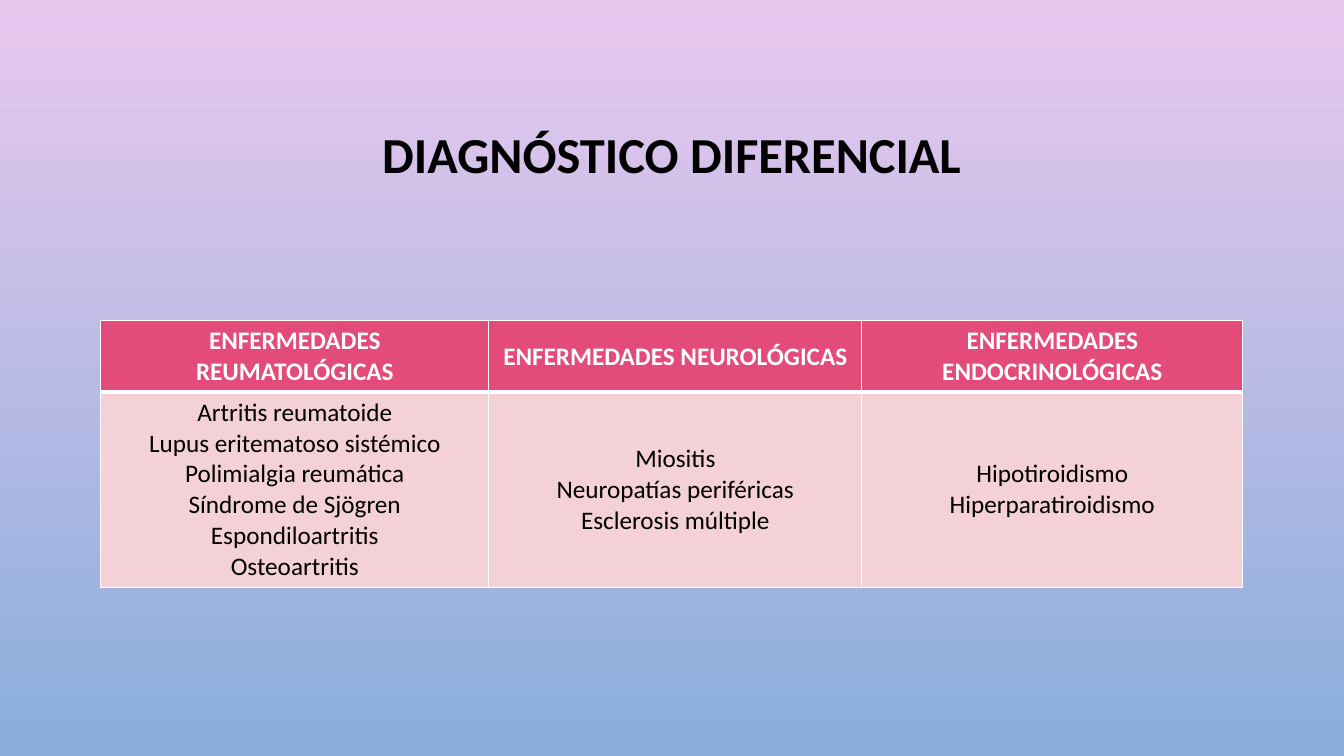
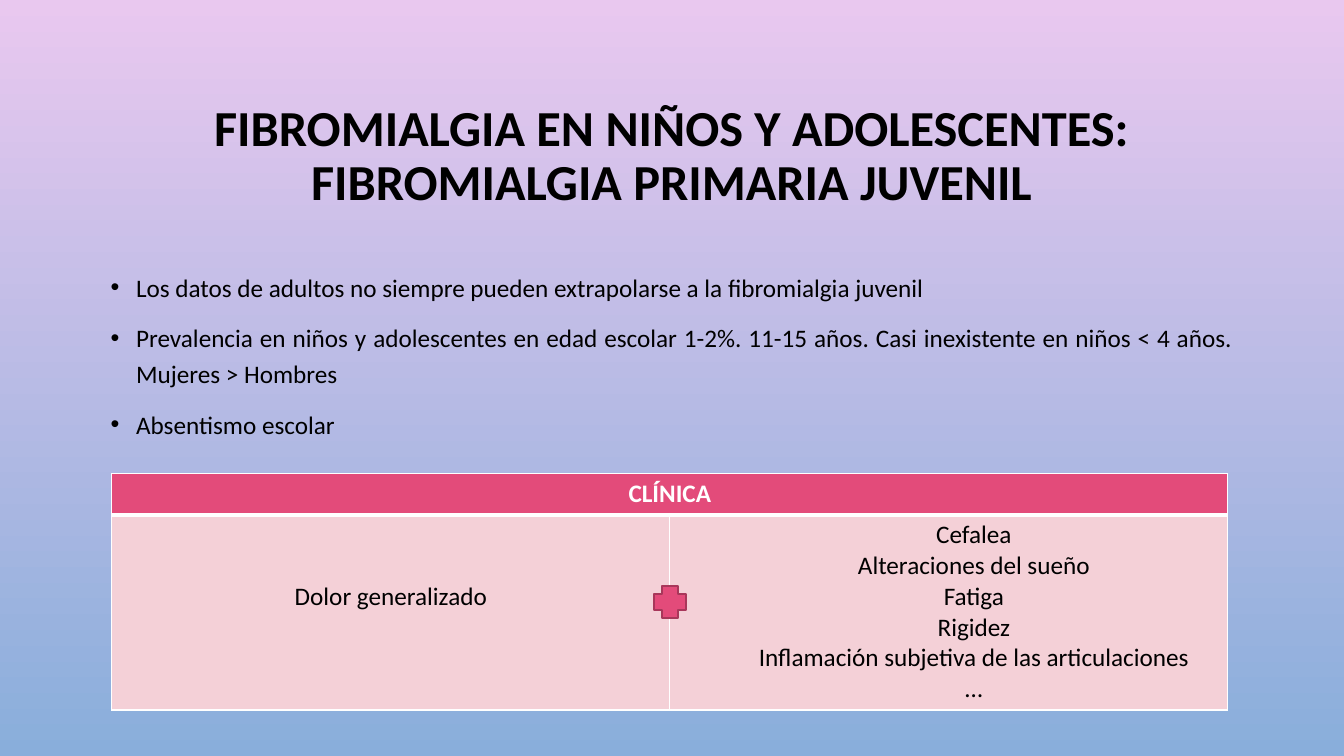
"""Two slides on fibromyalgia: differential diagnosis and the juvenile form."""
from lxml import etree
from pptx import Presentation
from pptx.dml import color as dml
from pptx.enum import shapes, text
from pptx.oxml import ns
from pptx.util import Cm, Pt

FONT = "Calibri"
COLORS = {
    "sky_top": "E9C8EF", "sky_bottom": "89AEDB", "header": "E34B7A",
    "body": "F4D0D7", "edge": "A8375A", "dark": "000000", "light": "FFFFFF",
}
MARGIN, CONTENT_WIDTH = 2.54, 28.78
LINE_HEIGHT = 0.78

DIAGNOSIS_TITLE = "DIAGNÓSTICO DIFERENCIAL"
DISEASES = {
    "ENFERMEDADES REUMATOLÓGICAS": [
        "Artritis reumatoide", "Lupus eritematoso sistémico", "Polimialgia reumática",
        "Síndrome de Sjögren", "Espondiloartritis", "Osteoartritis",
    ],
    "ENFERMEDADES NEUROLÓGICAS": [
        "Miositis", "Neuropatías periféricas", "Esclerosis múltiple",
    ],
    "ENFERMEDADES ENDOCRINOLÓGICAS": ["Hipotiroidismo", "Hiperparatiroidismo"],
}
JUVENILE_TITLE = "FIBROMIALGIA EN NIÑOS Y ADOLESCENTES: FIBROMIALGIA PRIMARIA JUVENIL"
JUVENILE_FACTS = [
    "Los datos de adultos no siempre pueden extrapolarse a la fibromialgia juvenil",
    "Prevalencia en niños y adolescentes en edad escolar 1-2%. 11-15 años. "
    "Casi inexistente en niños < 4 años. Mujeres > Hombres",
    "Absentismo escolar",
]
CLINIC_HEADER = ["CLÍNICA"]
CLINIC_SIGNS = [
    ["Dolor generalizado"],
    ["Cefalea", "Alteraciones del sueño", "Fatiga", "Rigidez",
     "Inflamación subjetiva de las articulaciones", "…"],
]


def rgb(name):
    return dml.RGBColor.from_string(COLORS[name])


def write(frame, lines, size=18, color="dark", bold=False, align=text.PP_ALIGN.CENTER):
    frame.word_wrap = True
    for index, line in enumerate(lines):
        paragraph = frame.paragraphs[0] if index == 0 else frame.add_paragraph()
        paragraph.alignment = align
        run = paragraph.add_run()
        run.text = line
        run.font.name, run.font.size, run.font.bold = FONT, Pt(size), bold
        run.font.color.rgb = rgb(color)


def add_text_box(slide, top, height):
    box = slide.shapes.add_textbox(Cm(MARGIN), Cm(top), Cm(CONTENT_WIDTH), Cm(height))
    return box.text_frame


def add_titled_slide(presentation, title):
    slide = presentation.slides.add_slide(presentation.slide_layouts[6])
    frame = add_text_box(slide, 1.73, 4.45)
    frame.vertical_anchor = text.MSO_ANCHOR.MIDDLE
    write(frame, [title], size=36, bold=True)
    frame.paragraphs[0].line_spacing = 0.9
    return slide


def add_bullets(slide, lines, top, height):
    frame = add_text_box(slide, top, height)
    write(frame, lines, align=text.PP_ALIGN.JUSTIFY)
    for index, paragraph in enumerate(frame.paragraphs):
        properties = paragraph._p.get_or_add_pPr()
        properties.set("marL", str(Cm(0.64)))
        properties.set("indent", str(-Cm(0.64)))
        etree.SubElement(properties, ns.qn("a:buFont"), typeface="Arial")
        etree.SubElement(properties, ns.qn("a:buChar"), char="•")
        paragraph.line_spacing = 1.2
        paragraph.space_before = Pt(10 if index else 0)


def set_borders(cell, bottom):
    properties = cell._tc.get_or_add_tcPr()
    for index, (side, width) in enumerate(zip("LRTB", (1, 1, 1, bottom))):
        line = etree.Element(ns.qn(f"a:ln{side}"), w=str(Pt(width)))
        fill = etree.SubElement(line, ns.qn("a:solidFill"))
        etree.SubElement(fill, ns.qn("a:srgbClr"), val=COLORS["light"])
        properties.insert(index, line)


def add_table(slide, left, top, widths, heights, headers, columns, anchor):
    frame = slide.shapes.add_table(
        2, len(widths), Cm(left), Cm(top), Cm(sum(widths)), Cm(sum(heights)))
    table = frame.table
    table.horz_banding = False
    for column, width in zip(table.columns, widths):
        column.width = Cm(width)
    for row, height in zip(table.rows, heights):
        row.height = Cm(height)
    if len(headers) < len(widths):
        table.cell(0, 0).merge(table.cell(0, len(widths) - 1))
    for index, header in enumerate(headers):
        write(table.cell(0, index).text_frame, [header], color="light", bold=True)
    for index, lines in enumerate(columns):
        write(table.cell(1, index).text_frame, lines)
        for row, (fill, bottom) in enumerate((("header", 3), ("body", 1))):
            cell = table.cell(row, index)
            cell.vertical_anchor = anchor
            cell.fill.solid()
            cell.fill.fore_color.rgb = rgb(fill)
            set_borders(cell, bottom)
    return table


def add_plus(slide, center_x, center_y, size=0.8):
    plus = slide.shapes.add_shape(
        shapes.MSO_SHAPE.CROSS, Cm(center_x - size / 2), Cm(center_y - size / 2),
        Cm(size), Cm(size))
    plus.shadow.inherit = False
    plus.fill.solid()
    plus.fill.fore_color.rgb = rgb("header")
    plus.line.color.rgb = rgb("edge")
    plus.line.width = Pt(1.25)


def set_background(master):
    fill = master.background.fill
    fill.gradient()
    fill.gradient_angle = 270
    for stop, name in zip(fill.gradient_stops, ("sky_top", "sky_bottom")):
        stop.color.rgb = rgb(name)


def build_diagnosis(presentation):
    slide = add_titled_slide(presentation, DIAGNOSIS_TITLE)
    add_table(slide, MARGIN, 8.08, (9.78, 9.4, 9.6), (1.8, 4.92),
              list(DISEASES), DISEASES.values(), text.MSO_ANCHOR.MIDDLE)


def build_juvenile(presentation):
    slide = add_titled_slide(presentation, JUVENILE_TITLE)
    add_bullets(slide, JUVENILE_FACTS, 6.58, 5)
    left, top, width = 2.82, 11.94, 14.06
    table = add_table(slide, left, top, (width, width), (1.03, 4.92),
                      CLINIC_HEADER, CLINIC_SIGNS, text.MSO_ANCHOR.TOP)
    table.cell(1, 0).margin_top = Cm(0.13 + 2 * LINE_HEIGHT)
    table.cell(1, 1).margin_left = Cm(1.52)
    add_plus(slide, left + width, 15.17)


def main():
    presentation = Presentation()
    presentation.slide_width, presentation.slide_height = Cm(33.87), Cm(19.05)
    set_background(presentation.slide_master)
    build_diagnosis(presentation)
    build_juvenile(presentation)
    presentation.save("out.pptx")


if __name__ == "__main__":
    main()
